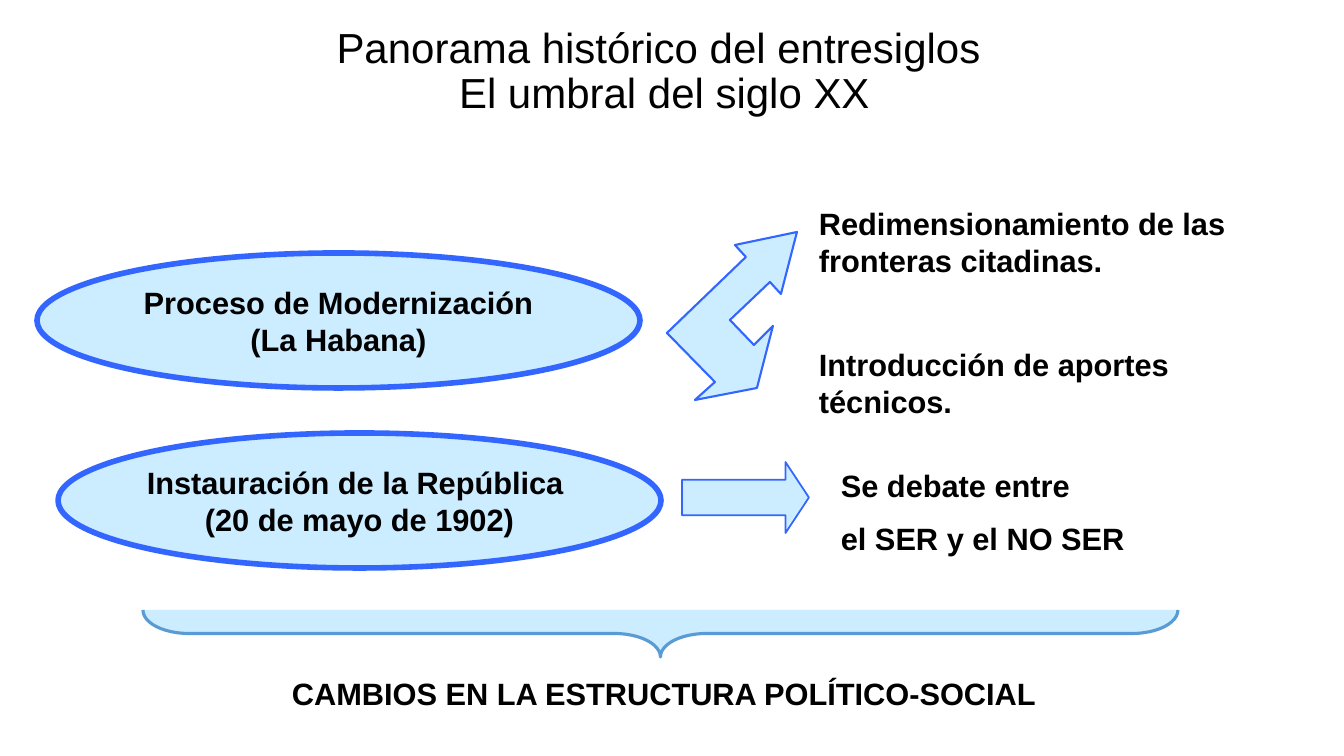
from pptx import Presentation
from pptx import util as u
from pptx.dml.color import RGBColor
from pptx.enum import shapes, text

PX = 914400 / 100.8
COLORS = {"ink": "000000", "pale": "CCECFF", "edge": "3366FF", "brace": "5B9BD5", "paper": "FFFFFF"}
ANCHOR = text.MSO_ANCHOR
ALIGN = text.PP_ALIGN


def style(shape, line, width, fill="pale"):
    shape.shadow.inherit = False
    shape.fill.solid()
    shape.fill.fore_color.rgb = RGBColor.from_string(COLORS[fill])
    shape.line.color.rgb = RGBColor.from_string(COLORS[line])
    shape.line.width = u.Pt(width)


def write(shape, lines, size=22, bold=True, align=ALIGN.LEFT, anchor=ANCHOR.TOP,
          wrap=True, gap=0, spacing=1.0):
    frame = shape.text_frame
    frame.word_wrap = wrap
    frame.vertical_anchor = anchor
    for i, line in enumerate(lines):
        paragraph = frame.paragraphs[0] if i == 0 else frame.add_paragraph()
        paragraph.text = line
        paragraph.alignment = align
        paragraph.line_spacing = spacing
        if i:
            paragraph.space_before = u.Pt(gap)
        paragraph.font.size = u.Pt(size)
        paragraph.font.bold = bold
        paragraph.font.name = "Arial"
        paragraph.font.color.rgb = RGBColor.from_string(COLORS["ink"])


deck = Presentation()
deck.slide_width = round(1344 * PX)
deck.slide_height = round(756 * PX)
slide = deck.slides.add_slide(deck.slide_layouts[6])
canvas = slide.shapes

heading = canvas.add_shape(shapes.MSO_SHAPE.RECTANGLE, *[round(v * PX) for v in (0, 21, 1329, 103)])
style(heading, "paper", 3.5, fill="paper")
write(heading, ["Panorama histórico del entresiglos \vEl umbral del siglo XX"], size=30, bold=False,
      align=ALIGN.CENTER, anchor=ANCHOR.MIDDLE, spacing=0.9)

processes = [
    (37, 253, ["Proceso de Modernización", "(La Habana)"]),
    (58, 433, ["Instauración de la República ", "(20 de mayo de 1902)"]),
]
for left, top, lines in processes:
    process = canvas.add_shape(shapes.MSO_SHAPE.OVAL, *[round(v * PX) for v in (left, top, 603, 135)])
    style(process, "edge", 4)
    write(process, lines, align=ALIGN.CENTER, anchor=ANCHOR.MIDDLE, wrap=False)

fork_outline = [(757, 388), (773, 326), (754, 345), (730, 320), (770, 282), (781, 294),
                (797, 232), (735, 245), (746, 257), (667, 333), (715, 382), (695, 400)]
builder = canvas.build_freeform(*fork_outline[0], scale=PX)
builder.add_line_segments(fork_outline[1:], close=True)
fork = builder.convert_to_shape()
style(fork, "edge", 1.5)

debate_arrow = canvas.add_shape(shapes.MSO_SHAPE.RIGHT_ARROW, *[round(v * PX) for v in (682, 462, 127, 71)])
debate_arrow.adjustments[0] = 0.5
debate_arrow.adjustments[1] = 0.33
style(debate_arrow, "edge", 1.25)

summary_brace = canvas.add_shape(shapes.MSO_SHAPE.LEFT_BRACE, *[round(v * PX) for v in (637, 116, 47, 1035)])
summary_brace.adjustments[0] = 0.98
summary_brace.adjustments[1] = 0.5
summary_brace.rotation = 270
style(summary_brace, "brace", 2.25)

statements = [
    (809, 200, 487, 85, ALIGN.LEFT, ["Redimensionamiento de las fronteras citadinas."]),
    (809, 341, 487, 85, ALIGN.LEFT, ["Introducción de aportes técnicos."]),
    (831, 462, 466, 104, ALIGN.LEFT, ["Se debate entre", "el SER y el NO SER"]),
    (119, 670, 1090, 47, ALIGN.CENTER, ["CAMBIOS EN LA ESTRUCTURA POLÍTICO-SOCIAL"]),
]
for left, top, width, height, align, lines in statements:
    statement = canvas.add_textbox(*[round(v * PX) for v in (left, top, width, height)])
    write(statement, lines, align=align, gap=11)

deck.save("out.pptx")
